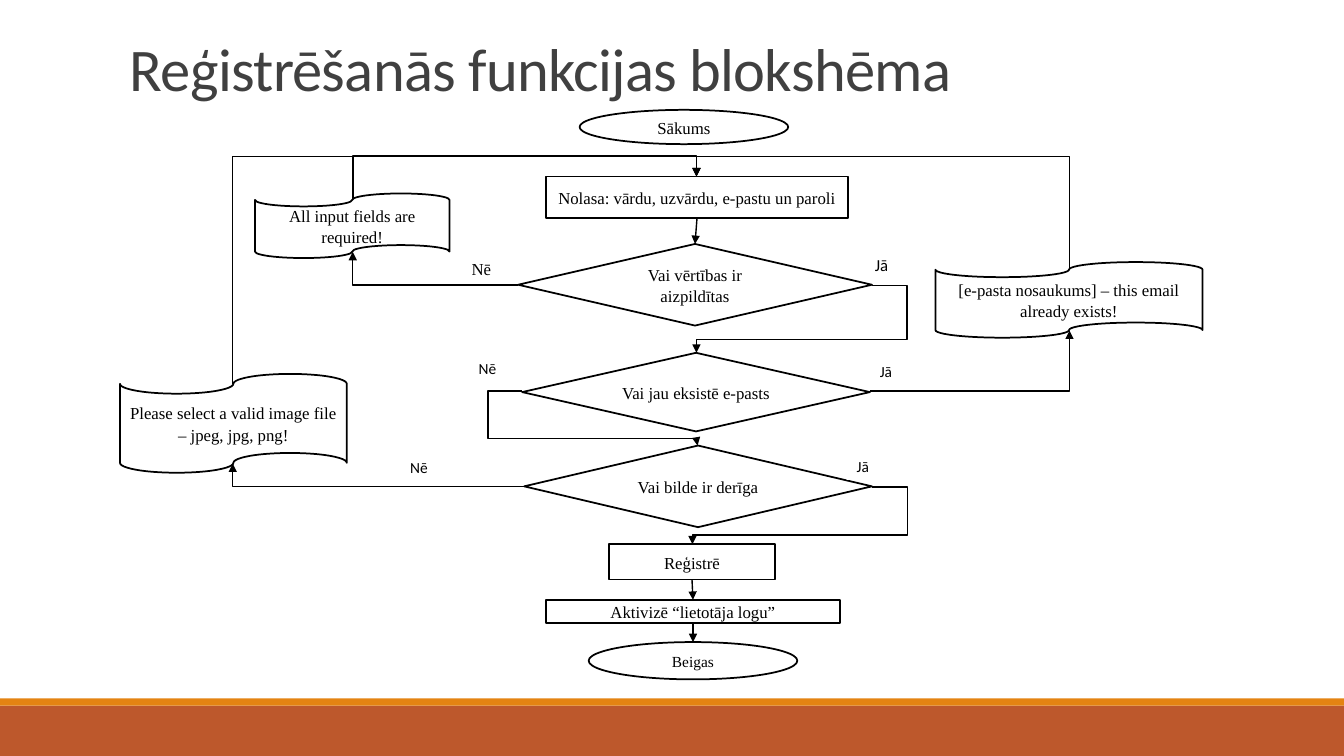
from dataclasses import dataclass
from typing import Optional

from lxml import etree
from pptx import Presentation
from pptx.dml.color import RGBColor
from pptx.enum.shapes import MSO_CONNECTOR, MSO_SHAPE
from pptx.enum.text import MSO_ANCHOR, PP_ALIGN
from pptx.oxml.ns import qn
from pptx.util import Inches, Pt

ELLIPSE = MSO_SHAPE.OVAL
RECTANGLE = MSO_SHAPE.RECTANGLE
DIAMOND = MSO_SHAPE.DIAMOND
TAPE = MSO_SHAPE.FLOWCHART_PUNCHED_TAPE
STRAIGHT = MSO_CONNECTOR.STRAIGHT
ELBOW = MSO_CONNECTOR.ELBOW
TOP, MIDDLE, BOTTOM = MSO_ANCHOR.TOP, MSO_ANCHOR.MIDDLE, MSO_ANCHOR.BOTTOM
LEFT, CENTER = PP_ALIGN.LEFT, PP_ALIGN.CENTER

COLUMNS, ROWS = 133.33, 75
CELL = Inches(0.1)
SANS, SERIF = "Calibri", "Times New Roman"
COLORS = {"paper": "FFFFFF", "ink": "000000", "title": "404040",
          "rust": "BD582C", "orange": "E48312"}
TOP_SITE, BOTTOM_SITE = 0, 2
QUARTER_TURN = "5400000"
RETURN_ROW = 15.5


@dataclass(frozen=True)
class Node:
    text: str
    kind: int
    left: float
    top: float
    width: float
    height: float
    size: float = 12


@dataclass(frozen=True)
class Label:
    text: str
    left: float
    top: float
    width: float
    height: float
    size: float = 11
    font: str = SANS


@dataclass(frozen=True)
class Route:
    start: tuple[float, float]
    end: tuple[float, float]
    lane_column: Optional[float] = None
    lane_row: Optional[float] = None


NODES = {
    "start": Node("Sākums", ELLIPSE, 57.5, 10.9, 20.7, 3.4),
    "read": Node("Nolasa: vārdu, uzvārdu, e‑pastu un paroli",
                 RECTANGLE, 54.2, 17.5, 29.9, 4.1),
    "filled": Node("Vai vērtības ir aizpildītas", DIAMOND, 51.4, 24.2, 35.1, 8.1),
    "exists": Node("Vai jau eksistē e-pasts", DIAMOND, 51.8, 35, 34.5, 7.8),
    "valid": Node("Vai bilde ir derīga", DIAMOND, 52, 44.2, 34.5, 8.1),
    "required": Node("All input fields are required!", TAPE, 25.3, 19.2, 19.3, 6.4),
    "taken": Node("[e-pasta nosaukums] – this email already exists!",
                  TAPE, 92.8, 26, 26.5, 7.5),
    "image": Node("Please select a valid image file – jpeg, jpg, png!",
                  TAPE, 11.9, 37.1, 22.5, 9.8),
    "register": Node("Reģistrē", RECTANGLE, 60.4, 54, 16.5, 3.5),
    "activate": Node("Aktivizē “lietotāja logu”", RECTANGLE, 54.2, 59.5, 29.1, 2.3),
    "finish": Node("Beigas", ELLIPSE, 58.4, 63.7, 20.7, 3.7, 11),
}

LABELS = [
    Label("Nē", 45.8, 25.1, 5.6, 2.7, 12, SERIF),
    Label("Nē", 46.5, 35, 5.3, 2.7),
    Label("Nē", 39.7, 44.9, 5.3, 2.7),
    Label("Jā", 85.8, 24.7, 4.7, 2.7, 12),
    Label("Jā", 86.3, 35.3, 4.6, 2.2),
    Label("Jā", 84, 44.7, 4.6, 2.9),
]

ROUTES = [
    Route((51.8, 38.8), (69.2, 44.2), 48.4, 43.5),
    Route((86.5, 28.3), (69.1, 35), 90, 33.7),
    Route((86.5, 48.3), (68.7, 54), 90, 53.1),
    Route((86.3, 38.8), (106.1, 32.8)),
    Route((51.4, 28.3), (35, 25)),
    Route((52, 48.3), (23.1, 46)),
    Route((106.1, 26.8), (69.1, 17.5), lane_row=RETURN_ROW),
    Route((35, 19.8), (69.1, 17.5), lane_row=RETURN_ROW),
    Route((23.1, 38.1), (69.1, 17.5), lane_row=RETURN_ROW),
]

STRAIGHT_STEPS = [("read", "filled"), ("register", "activate"), ("activate", "finish")]


def cells(*counts: float) -> list[int]:
    return [round(count * CELL) for count in counts]


def color(name: str) -> RGBColor:
    return RGBColor.from_string(COLORS[name])


def write(shape, text: str, size: float, font: str, ink: str = "ink",
          anchor=MIDDLE, align=CENTER, wrap: bool = True,
          spacing: float = 1.06, after: float = 8):
    frame = shape.text_frame
    frame.word_wrap = wrap
    frame.vertical_anchor = anchor
    paragraph = frame.paragraphs[0]
    paragraph.text = text
    paragraph.alignment = align
    paragraph.line_spacing = spacing
    paragraph.space_after = Pt(after)
    paragraph.font.size = Pt(size)
    paragraph.font.name = font
    paragraph.font.color.rgb = color(ink)
    return paragraph


def add_panel(page, kind: int, place: tuple, fill: str, outlined: bool = False):
    shape = page.shapes.add_shape(kind, *cells(*place))
    shape.shadow.inherit = False
    shape.fill.solid()
    shape.fill.fore_color.rgb = color(fill)
    if outlined:
        shape.line.color.rgb = color("ink")
        shape.line.width = Pt(1.25)
    else:
        shape.line.fill.background()
    return shape


def add_node(page, node: Node):
    place = (node.left, node.top, node.width, node.height)
    shape = add_panel(page, node.kind, place, "paper", outlined=True)
    write(shape, node.text, node.size, SERIF)
    return shape


def add_label(page, label: Label) -> None:
    place = (label.left, label.top, label.width, label.height)
    shape = add_panel(page, RECTANGLE, place, "paper")
    write(shape, label.text, label.size, label.font,
          anchor=TOP, align=LEFT, wrap=False)


def add_arrow(page, kind: int, start: tuple, end: tuple):
    arrow = page.shapes.add_connector(kind, *cells(*start, *end))
    arrow.line.color.rgb = color("ink")
    arrow.line.width = Pt(1)
    etree.SubElement(arrow.line._get_or_add_ln(), qn("a:tailEnd"), type="triangle")
    etree.SubElement(arrow._element.spPr, qn("a:effectLst"))
    return arrow


def add_route(page, route: Route) -> None:
    (x, y), (end_x, end_y) = route.start, route.end
    across, down = end_x - x, end_y - y
    start, end = route.start, route.end
    shares = []
    if route.lane_column is not None:
        shares.append((route.lane_column - x) / across)
    if route.lane_row is not None:
        shares.append((route.lane_row - y) / down)
    turned = len(shares) == 1
    if turned:
        middle_x, middle_y = (x + end_x) / 2, (y + end_y) / 2
        start = (middle_x - down / 2, middle_y + across / 2)
        end = (middle_x + down / 2, middle_y - across / 2)
    arrow = add_arrow(page, ELBOW, start, end)
    properties = arrow._element.spPr
    if turned:
        properties.find(qn("a:xfrm")).set("rot", QUARTER_TURN)
    geometry = properties.find(qn("a:prstGeom"))
    geometry.set("prst", f"bentConnector{len(shares) + 2}")
    guides = geometry.find(qn("a:avLst"))
    for number, share in enumerate(shares, 1):
        etree.SubElement(guides, qn("a:gd"), name=f"adj{number}",
                         fmla=f"val {round(share * 100000)}")


def main() -> None:
    deck = Presentation()
    deck.slide_width, deck.slide_height = cells(COLUMNS, ROWS)
    page = deck.slides.add_slide(deck.slide_layouts[6])
    add_panel(page, RECTANGLE, (0, 70, COLUMNS, 5), "rust")
    add_panel(page, RECTANGLE, (0, 69.3, COLUMNS, 0.7), "orange")
    title = page.shapes.add_textbox(*cells(11.9, 3.1, 110.3, 7.7))
    heading = write(title, "Reģistrēšanās funkcijas blokshēma", 43.2, SANS, "title",
                    anchor=BOTTOM, align=LEFT, spacing=0.85, after=0)
    heading.runs[0].font._element.set("spc", "-50")
    shapes = {name: add_node(page, node) for name, node in NODES.items()}
    for label in LABELS:
        add_label(page, label)
    for route in ROUTES:
        add_route(page, route)
    for upper, lower in STRAIGHT_STEPS:
        arrow = add_arrow(page, STRAIGHT, (0, 0), (0, 0))
        arrow.begin_connect(shapes[upper], BOTTOM_SITE)
        arrow.end_connect(shapes[lower], TOP_SITE)
    deck.save("out.pptx")


if __name__ == "__main__":
    main()
